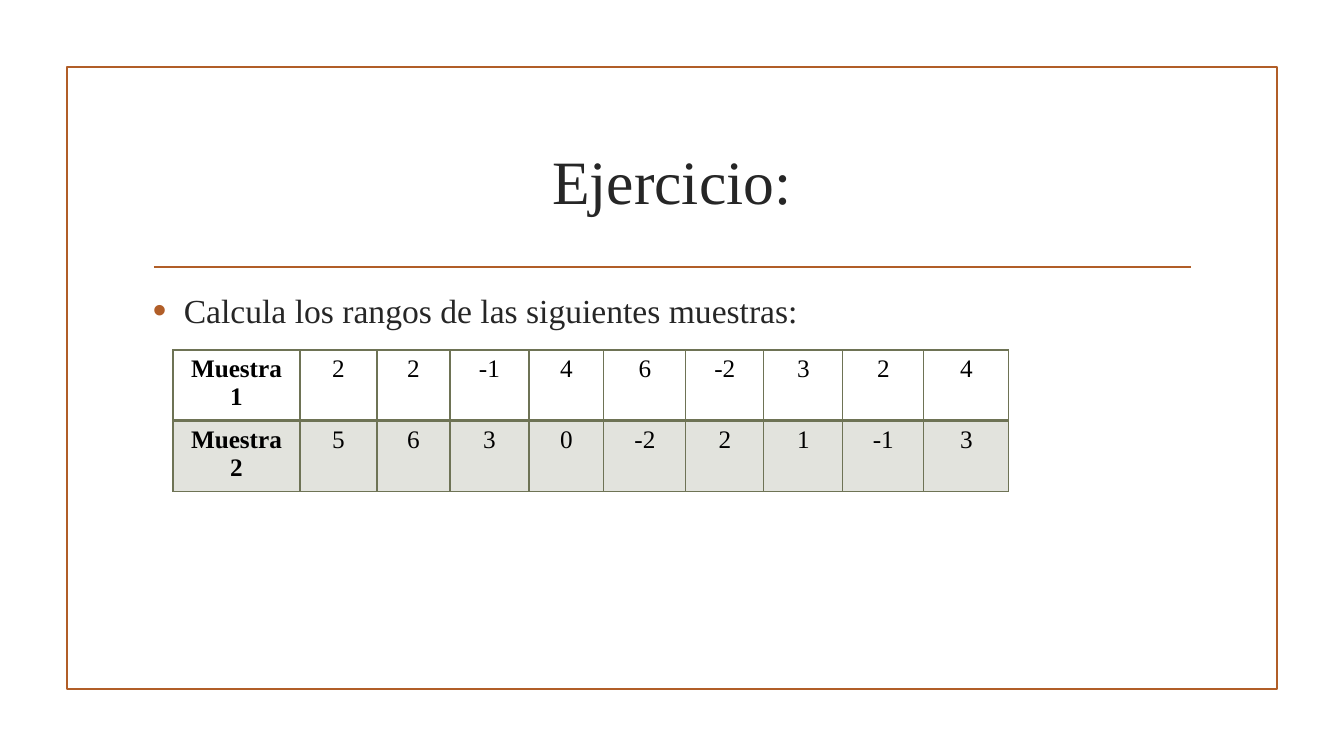
from lxml.etree import SubElement
from pptx import Presentation
from pptx.dml.color import RGBColor
from pptx.enum.shapes import MSO_CONNECTOR, MSO_SHAPE
from pptx.enum.text import MSO_ANCHOR, PP_ALIGN
from pptx.oxml.ns import qn
from pptx.util import Emu, Pt

COLORS = {"accent": "B15E28", "text": "262626", "cell": "000000", "olive": "6E7355"}
FONT = "Times New Roman"
EMU_PER_PX = 9071.43
COLUMN_WIDTHS = [127, 77, 73, 79, 75, 82, 78, 79, 81, 85]
SAMPLES = [
    ["Muestra 1", "2", "2", "-1", "4", "6", "-2", "3", "2", "4"],
    ["Muestra 2", "5", "6", "3", "0", "-2", "2", "1", "-1", "3"],
]


def px(length):
    return Emu(round(length * EMU_PER_PX))


def color(name):
    return RGBColor.from_string(COLORS[name])


def add_element(parent, tag, **attributes):
    return SubElement(parent, qn(tag), attributes)


class SlideBuilder:
    """Draws styled elements on one slide, measured in px."""

    def __init__(self, slide):
        self.slide = slide

    def frame(self, left, top, width, height):
        shape = self.slide.shapes.add_shape(
            MSO_SHAPE.RECTANGLE, px(left), px(top), px(width), px(height))
        shape.shadow.inherit = False
        shape.fill.background()
        shape.line.color.rgb = color("accent")
        shape.line.width = Pt(1.25)

    def rule(self, left, right, y):
        connector = self.slide.shapes.add_connector(
            MSO_CONNECTOR.STRAIGHT, px(left), px(y), px(right), px(y))
        connector.line.color.rgb = color("accent")
        connector.line.width = Pt(1.25)
        add_element(connector._element.spPr, "a:effectLst")

    def add_text(self, paragraph, text, size, color_name, bold=False):
        run = paragraph.add_run()
        run.text = text
        run.font.name = FONT
        run.font.size = Pt(size)
        run.font.bold = bold
        run.font.color.rgb = color(color_name)

    def text_box(self, left, top, width, height, anchor):
        box = self.slide.shapes.add_textbox(px(left), px(top), px(width), px(height))
        box.text_frame.word_wrap = True
        box.text_frame.vertical_anchor = anchor
        return box.text_frame.paragraphs[0]

    def title(self, text, left, top, width, height):
        paragraph = self.text_box(left, top, width, height, MSO_ANCHOR.MIDDLE)
        paragraph.alignment = PP_ALIGN.CENTER
        self.add_text(paragraph, text, 44, "text")

    def bullet(self, text, left, top, width, height):
        paragraph = self.text_box(left, top, width, height, MSO_ANCHOR.TOP)
        properties = paragraph._p.get_or_add_pPr()
        indent = px(31)
        properties.set("marL", str(indent))
        properties.set("indent", str(-indent))
        bullet_color = add_element(properties, "a:buClr")
        add_element(bullet_color, "a:srgbClr", val=COLORS["accent"])
        add_element(properties, "a:buSzPct", val="115000")
        add_element(properties, "a:buFont", typeface="Arial")
        add_element(properties, "a:buChar", char="•")
        paragraph.space_after = Pt(6)
        self.add_text(paragraph, text, 24, "text")

    def border(self, cell, widths):
        properties = cell._tc.get_or_add_tcPr()
        for index, (side, width) in enumerate(zip("LRTB", widths)):
            line = add_element(properties, f"a:ln{side}", w=str(Pt(width)))
            fill = add_element(line, "a:solidFill")
            add_element(fill, "a:srgbClr", val=COLORS["olive"])
            properties.insert(index, line)

    def shade(self, cell):
        cell.fill.solid()
        cell.fill.fore_color.rgb = color("olive")
        fill_color = cell._tc.tcPr.find(".//" + qn("a:srgbClr"))
        add_element(fill_color, "a:alpha", val="20000")

    def table(self, rows, widths, left, top, row_height):
        table = self.slide.shapes.add_table(
            len(rows), len(widths), px(left), px(top),
            px(sum(widths)), px(row_height * len(rows))).table
        table.first_row = False
        table.horz_banding = False
        for column, width in zip(table.columns, widths):
            column.width = px(width)
        for row_index, values in enumerate(rows):
            table.rows[row_index].height = px(row_height)
            for column_index, value in enumerate(values):
                cell = table.cell(row_index, column_index)
                paragraph = cell.text_frame.paragraphs[0]
                paragraph.alignment = PP_ALIGN.CENTER
                self.add_text(paragraph, value, 18, "cell", bold=column_index == 0)
                if row_index == 0:
                    cell.fill.background()
                    self.border(cell, (1, 1, 1, 2))
                else:
                    self.shade(cell)
                    self.border(cell, (1, 1, 2, 1))


def main():
    presentation = Presentation()
    presentation.slide_width = px(1344)
    presentation.slide_height = px(756)
    builder = SlideBuilder(presentation.slides.add_slide(presentation.slide_layouts[6]))
    builder.frame(67, 67, 1210, 622)
    builder.rule(154, 1191, 267)
    builder.title("Ejercicio:", 143, 108, 1058, 144)
    builder.bullet("Calcula los rangos de las siguientes muestras:", 143, 285, 1058, 366)
    builder.table(SAMPLES, COLUMN_WIDTHS, 173, 350, 41)
    presentation.save("out.pptx")


if __name__ == "__main__":
    main()
